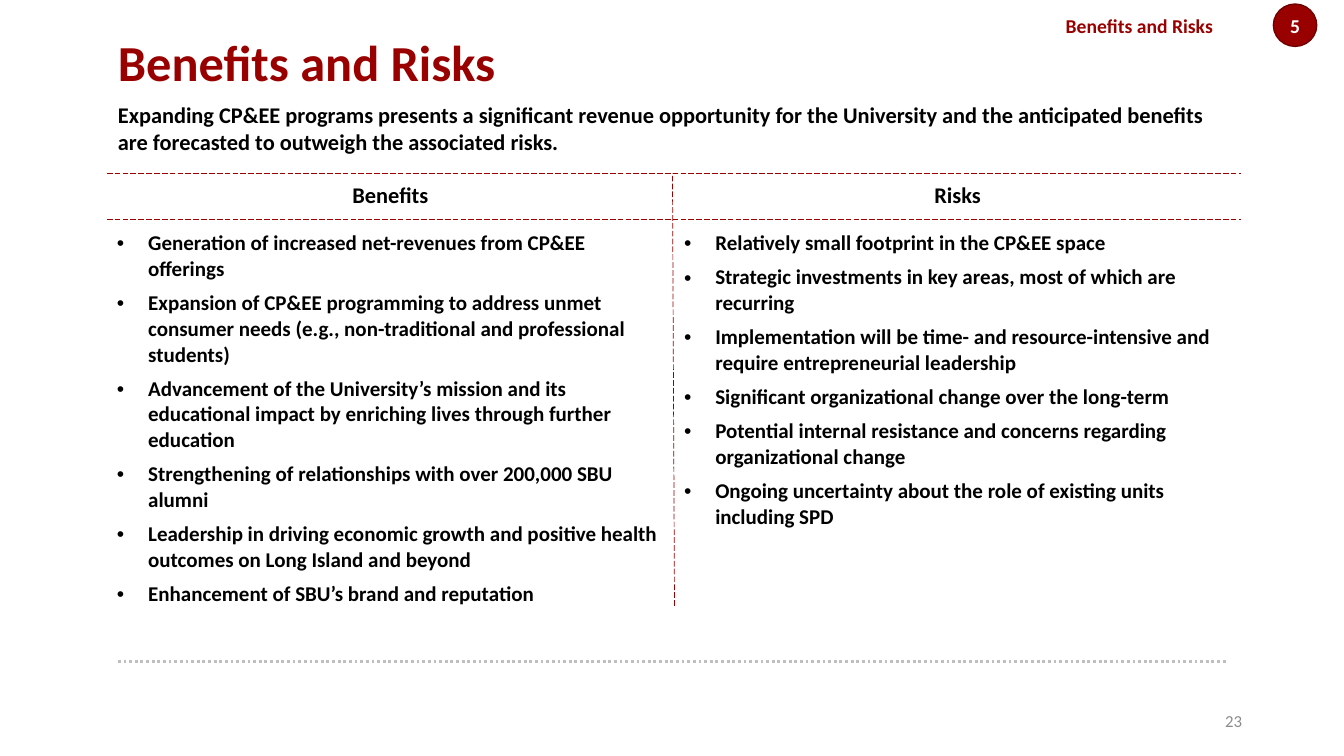
import pptx
import pptx.util
import pptx.dml.color
import pptx.enum.dml
import pptx.enum.shapes
import pptx.enum.text
import pptx.oxml.ns
from lxml import etree

Inches, Pt = pptx.util.Inches, pptx.util.Pt
RGBColor = pptx.dml.color.RGBColor
DASH = pptx.enum.dml.MSO_LINE
ALIGN = pptx.enum.text.PP_ALIGN
MIDDLE = pptx.enum.text.MSO_ANCHOR.MIDDLE
qn = pptx.oxml.ns.qn

RED = RGBColor(0x99, 0x00, 0x00)
DARK_RED = RGBColor(0x71, 0x00, 0x00)
BLACK = RGBColor(0x00, 0x00, 0x00)
WHITE = RGBColor(0xFF, 0xFF, 0xFF)
LIGHT_GREY = RGBColor(0xBF, 0xBF, 0xBF)
GREY = RGBColor(0x8C, 0x8C, 0x8C)

prs = pptx.Presentation()
prs.slide_width, prs.slide_height = Inches(13.33), Inches(7.5)
s = prs.slides.add_slide(prs.slide_layouts[6])


def write(p, text, size, color, bold=True, align=ALIGN.LEFT):
    p.alignment = align
    r = p.add_run()
    r.text = text
    r.font.name = "Calibri"
    r.font.size = Pt(size)
    r.font.bold = bold
    r.font.color.rgb = color


def add_line(x1, y1, x2, y2, color, width, dash):
    line = s.shapes.add_connector(
        pptx.enum.shapes.MSO_CONNECTOR.STRAIGHT,
        Inches(x1), Inches(y1), Inches(x2), Inches(y2))
    line.line.color.rgb = color
    line.line.width = Pt(width)
    line.line.dash_style = dash
    etree.SubElement(line._element.spPr, qn("a:effectLst"))


# Footer rule
add_line(1.17, 6.56, 12.17, 6.56, LIGHT_GREY, 2, DASH.ROUND_DOT)

# Title, section label, lead sentence and page number
lead = ("Expanding CP&EE programs presents a significant revenue opportunity for the "
        "University and the anticipated benefits are forecasted to outweigh the "
        "associated risks.")
for x, y, w, h, text, size, color, bold, align, centred in [
    (1.17, 0.3, 11, 0.61, "Benefits and Risks", 36, RED, True, ALIGN.LEFT, True),
    (10.57, 0.14, 2.15, 0.24, "Benefits and Risks", 14, RED, True, ALIGN.LEFT, False),
    (1.17, 1, 11, 0.64, lead, 16, BLACK, True, ALIGN.LEFT, False),
    (9.42, 6.95, 2.9, 0.4, "23", 12, GREY, False, ALIGN.RIGHT, True),
]:
    tf = s.shapes.add_textbox(Inches(x), Inches(y), Inches(w), Inches(h)).text_frame
    tf.word_wrap = True
    tf.margin_left = tf.margin_right = tf.margin_top = tf.margin_bottom = 0
    if centred:
        tf.vertical_anchor = MIDDLE
    write(tf.paragraphs[0], text, size, color, bold, align)

# Section number badge
badge = s.shapes.add_shape(pptx.enum.shapes.MSO_SHAPE.OVAL,
                           Inches(12.63), Inches(0.04), Inches(0.43), Inches(0.42))
badge.shadow.inherit = False
badge.fill.solid()
badge.fill.fore_color.rgb = RED
badge.line.color.rgb = DARK_RED
badge.line.width = Pt(1)
badge.text_frame.vertical_anchor = MIDDLE
write(badge.text_frame.paragraphs[0], "5", 14, WHITE, align=ALIGN.CENTER)

# Benefits and risks table
columns = {
    "Benefits": [
        "Generation of increased net-revenues from CP&EE offerings",
        "Expansion of CP&EE programming to address unmet consumer needs "
        "(e.g., non-traditional and professional students)",
        "Advancement of the University’s mission and its educational impact by "
        "enriching lives through further education",
        "Strengthening of relationships with over 200,000 SBU alumni",
        "Leadership in driving economic growth and positive health outcomes on "
        "Long Island and beyond",
        "Enhancement of SBU’s brand and reputation",
    ],
    "Risks": [
        "Relatively small footprint in the CP&EE space",
        "Strategic investments in key areas, most of which are recurring",
        "Implementation will be time- and resource-intensive and require "
        "entrepreneurial leadership",
        "Significant organizational change over the long-term",
        "Potential internal resistance and concerns regarding organizational change",
        "Ongoing uncertainty about the role of existing units including SPD",
    ],
}
table = s.shapes.add_table(2, 2, Inches(1.06), Inches(1.64),
                           Inches(11.25), Inches(4.37)).table
table.first_row = table.horz_banding = False
table.rows[0].height, table.rows[1].height = Inches(0.6), Inches(3.77)

for col, (heading, points) in enumerate(columns.items()):
    head, body = table.cell(0, col), table.cell(1, col)
    head.fill.background()
    body.fill.background()
    head.vertical_anchor = MIDDLE
    write(head.text_frame.paragraphs[0], heading, 16, BLACK, align=ALIGN.CENTER)
    tf = body.text_frame
    for i, point in enumerate(points):
        p = tf.paragraphs[0] if i == 0 else tf.add_paragraph()
        pPr = p._p.get_or_add_pPr()
        pPr.set("marL", str(Inches(0.31)))
        pPr.set("indent", str(-Inches(0.31)))
        etree.SubElement(pPr, qn("a:buFont")).set("typeface", "Arial")
        etree.SubElement(pPr, qn("a:buChar")).set("char", "•")
        p.space_after = Pt(6)
        write(p, point, 15, BLACK)

# Dashed rules around the headings and between the columns
for y in (2.18, 1.72):
    add_line(1.06, y, 12.31, y, RED, 0.5, DASH.LONG_DASH)
add_line(6.69, 6.01, 6.67, 1.72, RED, 0.5, DASH.LONG_DASH)

prs.save("out.pptx")
